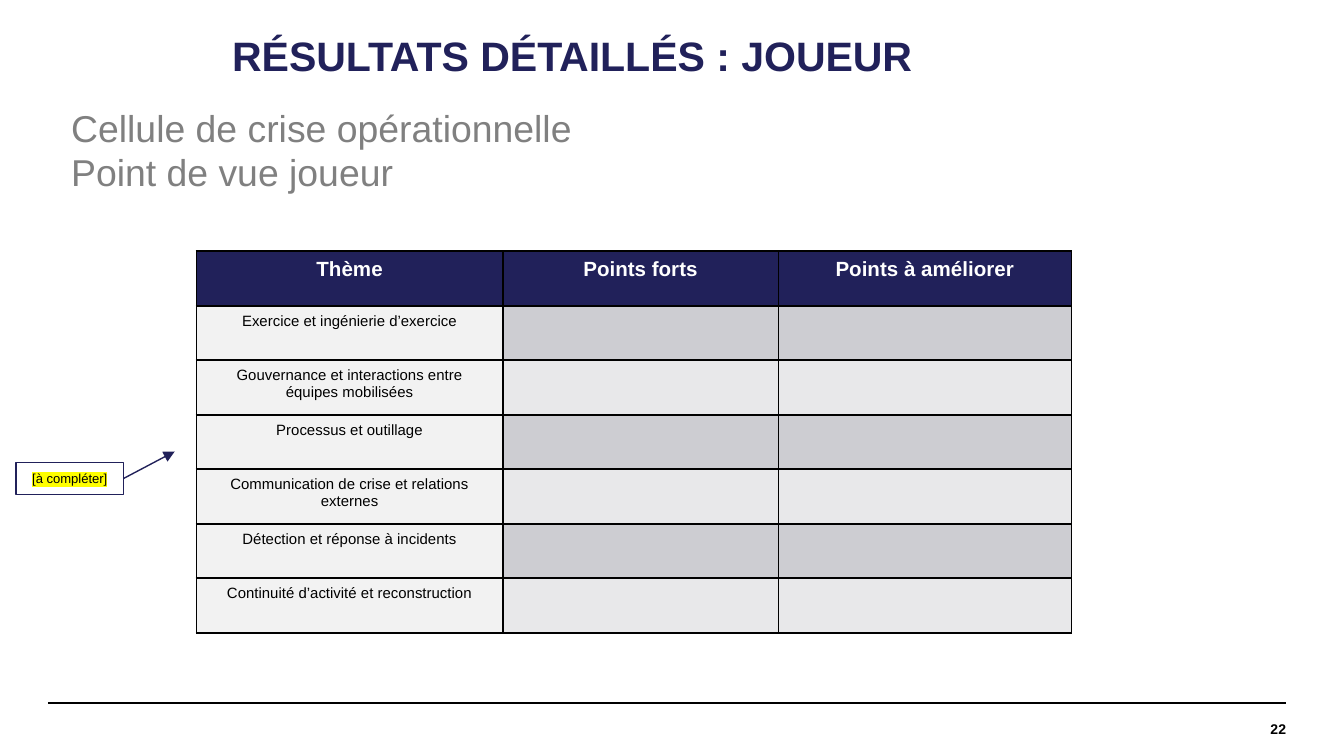
import pptx
import pptx.util
import pptx.dml.color
import pptx.enum.shapes
import pptx.enum.text
import pptx.oxml
import pptx.oxml.ns
from lxml import etree

Pt = pptx.util.Pt
ALIGN = pptx.enum.text.PP_ALIGN
MIDDLE = pptx.enum.text.MSO_ANCHOR.MIDDLE
TOP = pptx.enum.text.MSO_ANCHOR.TOP
NAVY, BLACK, GREY, WHITE = "21215A", "000000", "808080", "FFFFFF"
THEME_FILL, BANDS = "F2F2F2", ("CDCDD2", "E8E8EA")

TITLE = "RÉSULTATS DÉTAILLÉS : JOUEUR"
SUBTITLE = ["Cellule de crise opérationnelle", "Point de vue joueur"]
HEADERS = ["Thème", "Points forts", "Points à améliorer"]
THEMES = [
    "Exercice et ingénierie d’exercice",
    "Gouvernance et interactions entre équipes mobilisées",
    "Processus et outillage",
    "Communication de crise et relations externes",
    "Détection et réponse à incidents",
    "Continuité d’activité et reconstruction",
]
REMINDER = "[à compléter]"
PAGE_NUMBER = "22"
COLUMN_WIDTHS = [164.2, 147.6, 157]
ROW_HEIGHT = 29.2


def color(value):
    return pptx.dml.color.RGBColor.from_string(value)


def qn(tag):
    return pptx.oxml.ns.qn(tag)


def write(frame, lines, size, ink, bold=False, align=ALIGN.LEFT):
    for index, line in enumerate(lines):
        paragraph = frame.paragraphs[0] if index == 0 else frame.add_paragraph()
        paragraph.alignment = align
        run = paragraph.add_run()
        run.text = line
        run.font.size = Pt(size)
        run.font.name = "Arial"
        run.font.bold = bold
        run.font.color.rgb = color(ink)


def add_text(slide, box, lines, size, ink, anchor=MIDDLE, **style):
    frame = slide.shapes.add_textbox(*map(Pt, box)).text_frame
    frame.word_wrap = True
    frame.vertical_anchor = anchor
    write(frame, lines, size, ink, **style)
    return frame


def add_line(slide, start, end, ink, width):
    line = slide.shapes.add_connector(
        pptx.enum.shapes.MSO_CONNECTOR.STRAIGHT, *map(Pt, start + end))
    line.line.color.rgb = color(ink)
    line.line.width = Pt(width)
    etree.SubElement(line._element.spPr, qn("a:effectLst"))
    return line


def fill_cell(cell, fill):
    cell.fill.solid()
    cell.fill.fore_color.rgb = color(fill)
    properties = cell._tc.get_or_add_tcPr()
    for index, side in enumerate(("lnL", "lnR", "lnT", "lnB")):
        border = etree.Element(qn("a:" + side), w=str(Pt(1)))
        solid = etree.SubElement(border, qn("a:solidFill"))
        etree.SubElement(solid, qn("a:srgbClr"), val=BLACK)
        properties.insert(index, border)


def add_themes(slide):
    row_count = len(THEMES) + 1
    table = slide.shapes.add_table(
        row_count, len(HEADERS), Pt(105.2), Pt(134.6),
        Pt(sum(COLUMN_WIDTHS)), Pt(row_count * ROW_HEIGHT)).table
    for column, width in zip(table.columns, COLUMN_WIDTHS):
        column.width = Pt(width)
    for row in table.rows:
        row.height = Pt(ROW_HEIGHT)
    for index, header in enumerate(HEADERS):
        cell = table.cell(0, index)
        fill_cell(cell, NAVY)
        write(cell.text_frame, [header], 11, WHITE, True, ALIGN.CENTER)
    for row, theme in enumerate(THEMES, 1):
        fill_cell(table.cell(row, 0), THEME_FILL)
        write(table.cell(row, 0).text_frame, [theme], 8, BLACK, align=ALIGN.CENTER)
        for column in range(1, len(HEADERS)):
            fill_cell(table.cell(row, column), BANDS[(row - 1) % 2])


def add_reminder(slide):
    left, top, width, height = 8.6, 247.7, 57.6, 17.3
    reminder = slide.shapes.add_shape(
        pptx.enum.shapes.MSO_SHAPE.RECTANGLE, *map(Pt, (left, top, width, height)))
    reminder.shadow.inherit = False
    reminder.fill.background()
    reminder.line.color.rgb = color(NAVY)
    reminder.line.width = Pt(0.75)
    frame = reminder.text_frame
    frame.vertical_anchor = MIDDLE
    write(frame, [REMINDER], 7, BLACK, align=ALIGN.CENTER)
    highlight = etree.Element(qn("a:highlight"))
    etree.SubElement(highlight, qn("a:srgbClr"), val="FFFF00")
    run_properties = frame.paragraphs[0].runs[0]._r.get_or_add_rPr()
    run_properties.find(qn("a:solidFill")).addnext(highlight)
    arrow = add_line(slide, (left + width, top + height / 2), (93.6, 241.9), NAVY, 0.75)
    etree.SubElement(arrow.line._get_or_add_ln(), qn("a:tailEnd"), type="triangle")


def main():
    deck = pptx.Presentation()
    deck.slide_width, deck.slide_height = Pt(720), Pt(405)
    slide = deck.slides.add_slide(deck.slide_layouts[6])

    add_line(slide, (25.6, 376.6), (689, 376.6), BLACK, 0.8)
    number = add_text(slide, (582.5, 376.6, 106.5, 28.1), [PAGE_NUMBER], 7.5, BLACK,
                      bold=True, align=ALIGN.RIGHT)
    number.margin_left = number.margin_right = 0
    number.margin_top = number.margin_bottom = 0

    title = add_text(slide, (115.9, 7.2, 609.8, 48.2), [TITLE], 22, NAVY, bold=True)
    title.paragraphs[0].line_spacing = 0.9
    title.paragraphs[0]._p.get_or_add_pPr().set("marL", str(Pt(1.4)))
    add_text(slide, (31, 52.6, 452.2, 55.4), SUBTITLE, 20, GREY, anchor=TOP)
    add_reminder(slide)
    add_themes(slide)
    deck.save("out.pptx")


if __name__ == "__main__":
    main()
